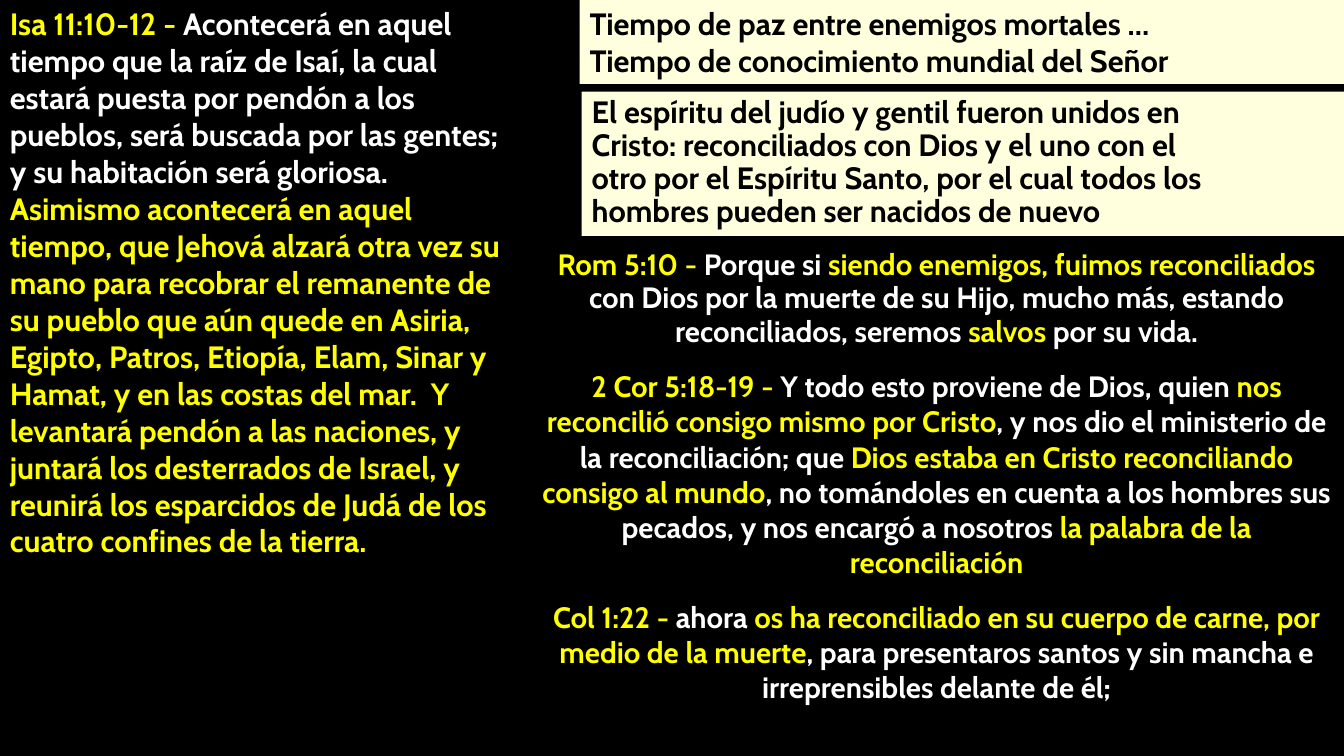
import itertools
import pptx
import pptx.util
import pptx.dml.color
import pptx.enum.shapes
import pptx.enum.text

Pt = pptx.util.Pt
FONT = "Cabin"
BLACK, WHITE, YELLOW, CREAM = "000000", "FFFFFF", "FFFF00", "FFFFDD"

# Cream notes: box (left, top, width, height), line spacing, lines
NOTES = [
    ((414, 0, 552, 60), 1.0, [
        "Tiempo de paz entre enemigos mortales …",
        "Tiempo de conocimiento mundial del Señor",
    ]),
    ((415.5, 65.5, 552, 103), 0.9, [
        "El espíritu del judío y gentil fueron unidos en",
        "Cristo: reconciliados con Dios y el uno con el",
        "otro por el Espíritu Santo, por el cual todos los",
        "hombres pueden ser nacidos de nuevo",
    ]),
]

# Verses: the parts of each one alternate yellow and white
ISAIAH = [(
    "Isa 11:10-12 - ",
    "Acontecerá en aquel tiempo que la raíz de Isaí, la cual estará puesta "
    "por pendón a los pueblos, será buscada por las gentes; y su habitación "
    "será gloriosa. ",
    "Asimismo acontecerá en aquel tiempo, que Jehová alzará otra vez su mano "
    "para recobrar el remanente de su pueblo que aún quede en Asiria, Egipto, "
    "Patros, Etiopía, Elam, Sinar y Hamat, y en las costas del mar.  Y "
    "levantará pendón a las naciones, y juntará los desterrados de Israel, y "
    "reunirá los esparcidos de Judá de los cuatro confines de la tierra.",
)]
LETTERS = [
    ("Rom 5:10 - ", "Porque si ", "siendo enemigos, fuimos reconciliados",
     " con Dios por la muerte de su Hijo, mucho más, estando reconciliados, "
     "seremos ", "salvos", " por su vida."),
    ("2 Cor 5:18-19 - ", "Y todo esto proviene de Dios, quien ",
     "nos reconcilió consigo mismo por Cristo",
     ", y nos dio el ministerio de la reconciliación; que ",
     "Dios estaba en Cristo reconciliando consigo al mundo",
     ", no tomándoles en cuenta a los hombres sus pecados, y nos encargó a "
     "nosotros ", "la palabra de la reconciliación"),
    ("Col 1:22 - ", "ahora ",
     "os ha reconciliado en su cuerpo de carne, por medio de la muerte",
     ", para presentaros santos y sin mancha e irreprensibles delante de él;"),
]
LEFT, CENTER = pptx.enum.text.PP_ALIGN.LEFT, pptx.enum.text.PP_ALIGN.CENTER
# Box, size, alignment, spacing of first and later verses, gap, verses
VERSES = [
    ((0, 0, 366, 487.5), 22, LEFT, (1.0, 1.0), 0, ISAIAH),
    ((378, 174, 582, 367), 21, CENTER, (0.95, 1.0), 13.5, LETTERS),
]


def paint(target, color):
    if hasattr(target, "solid"):
        target.solid()
        target = target.fore_color
    target.rgb = pptx.dml.color.RGBColor.from_string(color)


def write(shape, paras, size, align, first, later, gap, colors, hang=0):
    frame = shape.text_frame
    frame.word_wrap = True
    frame.auto_size = pptx.enum.text.MSO_AUTO_SIZE.SHAPE_TO_FIT_TEXT
    frame.vertical_anchor = pptx.enum.text.MSO_ANCHOR.TOP
    for i, parts in enumerate(paras):
        para = frame.add_paragraph() if i else frame.paragraphs[0]
        para.alignment = align
        para.line_spacing = later if i else first
        para.space_before = Pt(gap if i else 0)
        para.font.name, para.font.size, para.font.bold = FONT, Pt(size), True
        if hang:
            props = para._p.get_or_add_pPr()
            props.set("marL", str(Pt(hang)))
            props.set("indent", str(Pt(-hang)))
        for part, color in zip(parts, itertools.cycle(colors)):
            run = para.add_run()
            run.text = part
            paint(run.font.color, color)


# Slide
deck = pptx.Presentation()
deck.slide_width, deck.slide_height = Pt(960), Pt(540)
slide = deck.slides.add_slide(deck.slide_layouts[6])
paint(slide.background.fill, BLACK)

# Cream notes
for box, space, lines in NOTES:
    note = slide.shapes.add_shape(
        pptx.enum.shapes.MSO_SHAPE.RECTANGLE, *map(Pt, box))
    note.shadow.inherit = False
    paint(note.fill, CREAM)
    note.line.fill.background()
    write(note, [(line,) for line in lines], 22, LEFT, space, space, 0,
          [BLACK], hang=27)

# Verses
for box, size, align, (first, later), gap, paras in VERSES:
    verse = slide.shapes.add_textbox(*map(Pt, box))
    write(verse, paras, size, align, first, later, gap, [YELLOW, WHITE])

deck.save("out.pptx")
